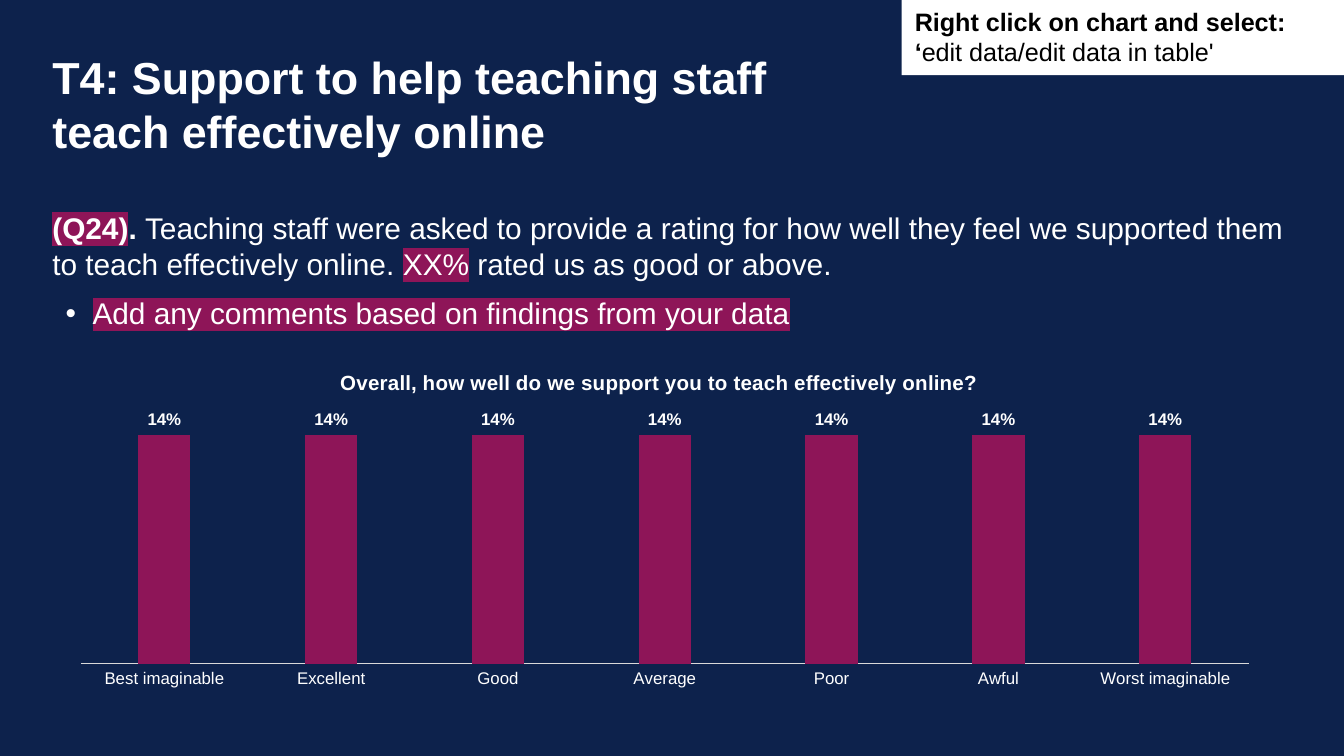
import pptx
import pptx.chart.data
import pptx.dml.color
import pptx.enum.chart
import pptx.enum.shapes
import pptx.enum.text
import pptx.oxml
import pptx.oxml.ns
import pptx.util
from lxml import etree

Cm = pptx.util.Cm
Pt = pptx.util.Pt
qn = pptx.oxml.ns.qn

NAVY, WHITE, BLACK = "0D224C", "FFFFFF", "000000"
PLUM, GREY = "8E1558", "D9D9D9"


def color(hex_code):
    return pptx.dml.color.RGBColor.from_string(hex_code)


def format_font(font, size, hex_code=WHITE, bold=False):
    font.name = "Arial"
    font.size = Pt(size)
    font.bold = bold
    font.color.rgb = color(hex_code)


def add_text(paragraph, text, size=16, hex_code=WHITE, bold=False, highlight=None):
    run = paragraph.add_run()
    run.text = text
    format_font(run.font, size, hex_code, bold)
    if highlight:
        mark = etree.Element(qn("a:highlight"))
        etree.SubElement(mark, qn("a:srgbClr"), val=highlight)
        run.font._element.find(qn("a:solidFill")).addnext(mark)


def set_bullet(paragraph, character=None, left=0, hanging=0):
    properties = paragraph._p.get_or_add_pPr()
    properties.set("marL", str(Cm(left)))
    properties.set("indent", str(-Cm(hanging)))
    if character:
        etree.SubElement(properties, qn("a:buFont"), typeface="Arial")
        etree.SubElement(properties, qn("a:buChar"), char=character)
    else:
        etree.SubElement(properties, qn("a:buNone"))


def set_layout(element, before, **values):
    """Place a chart part by fractions of the chart, ahead of the named child."""
    old = element.find(qn("c:layout"))
    if old is not None:
        element.remove(old)
    layout = etree.Element(qn("c:layout"))
    manual = etree.SubElement(layout, qn("c:manualLayout"))
    for name, value in values.items():
        etree.SubElement(manual, qn(f"c:{name}"), val=str(value))
    element.find(qn(before)).addprevious(layout)


class SlideBuilder:
    """Holds the style and the current slide."""

    line_spacing = 1.0
    paragraph_gap = 7.5

    def __init__(self, presentation):
        self.slide = presentation.slides.add_slide(presentation.slide_layouts[1])
        self.slide.background.fill.solid()
        self.slide.background.fill.fore_color.rgb = color(NAVY)

    def place(self, shape, left, top, width, height):
        shape.left, shape.top = Cm(left), Cm(top)
        shape.width, shape.height = Cm(width), Cm(height)
        frame = shape.text_frame
        frame.margin_left = frame.margin_right = frame.margin_top = frame.margin_bottom = 0
        frame.word_wrap = True
        frame.auto_size = pptx.enum.text.MSO_AUTO_SIZE.NONE
        frame.vertical_anchor = pptx.enum.text.MSO_ANCHOR.TOP
        return frame

    def align(self, paragraph, space_before=0):
        paragraph.alignment = pptx.enum.text.PP_ALIGN.LEFT
        paragraph.line_spacing = self.line_spacing
        paragraph.space_before = Pt(space_before)

    def title(self, text, *box):
        paragraph = self.place(self.slide.shapes.title, *box).paragraphs[0]
        self.align(paragraph)
        add_text(paragraph, text, size=24, bold=True)

    def body(self, lead, bullet, *box):
        frame = self.place(self.slide.placeholders[1], *box)
        paragraph = frame.paragraphs[0]
        set_bullet(paragraph)
        self.align(paragraph)
        for text, style in lead:
            add_text(paragraph, text, **style)
        paragraph = frame.add_paragraph()
        set_bullet(paragraph, "•", left=0.76, hanging=0.51)
        self.align(paragraph, self.paragraph_gap)
        add_text(paragraph, bullet, highlight=PLUM)

    def column_chart(self, title, categories, values, left, top, width, height):
        data = pptx.chart.data.CategoryChartData(number_format="0%")
        data.categories = categories
        data.add_series("Series 1", values)
        chart = self.slide.shapes.add_chart(
            pptx.enum.chart.XL_CHART_TYPE.COLUMN_CLUSTERED,
            Cm(left), Cm(top), Cm(width), Cm(height), data).chart
        format_font(chart.font, 10, BLACK)
        chart.has_legend = False
        add_text(chart.chart_title.text_frame.paragraphs[0], title, size=11, bold=True)
        chart.chart_title.include_in_layout = False
        set_layout(chart.chart_title._element, "c:overlay",
                   xMode="edge", yMode="edge", x=0.23, y=0.04)

        plot = chart.plots[0]
        plot.gap_width, plot.overlap = 219, -27
        plot.vary_by_categories = False
        fill = plot.series[0].format.fill
        fill.solid()
        fill.fore_color.rgb = color(PLUM)
        plot.has_data_labels = True
        labels = plot.data_labels
        labels.show_value = True
        labels.number_format, labels.number_format_is_linked = "0%", False
        labels.position = pptx.enum.chart.XL_LABEL_POSITION.OUTSIDE_END
        format_font(labels.font, 9, bold=True)

        no_tick = pptx.enum.chart.XL_TICK_MARK.NONE
        axis = chart.category_axis
        axis.major_tick_mark = axis.minor_tick_mark = no_tick
        format_font(axis.tick_labels.font, 9)
        axis.format.line.color.rgb = color(GREY)
        axis.format.line.width = Pt(0.75)
        value_axis = chart.value_axis
        value_axis.has_major_gridlines = False
        value_axis.minimum_scale, value_axis.maximum_scale = 0, 0.16
        value_axis.visible = False
        set_layout(chart._chartSpace.chart.plotArea, "c:barChart",
                   layoutTarget="inner", xMode="edge", yMode="edge",
                   x=0.02, y=0.15, w=0.96, h=0.76)

    def callout(self, heading, text, left, top, width, height):
        shape = self.slide.shapes.add_shape(
            pptx.enum.shapes.MSO_SHAPE.RECTANGLE,
            Cm(left), Cm(top), Cm(width), Cm(height))
        shape.shadow.inherit = False
        shape.fill.solid()
        shape.fill.fore_color.rgb = color(WHITE)
        shape.line.fill.background()
        shape.text_frame.word_wrap = True
        shape.text_frame.vertical_anchor = pptx.enum.text.MSO_ANCHOR.TOP
        paragraph = shape.text_frame.paragraphs[0]
        self.align(paragraph)
        add_text(paragraph, heading, size=13.5, hex_code=BLACK, bold=True)
        add_text(paragraph, text, size=13.5, hex_code=BLACK)


def main():
    presentation = pptx.Presentation()
    presentation.slide_width, presentation.slide_height = Cm(25.4), Cm(14.29)
    builder = SlideBuilder(presentation)
    builder.title("T4: Support to help teaching staff teach effectively online",
                  0.99, 0.94, 15.62, 0.94)
    lead = [
        ("(Q24)", {"bold": True, "highlight": PLUM}),
        (". ", {"bold": True}),
        ("Teaching staff were asked to provide a rating for how well they feel "
         "we supported them to teach effectively online. ", {}),
        ("XX%", {"highlight": PLUM}),
        (" rated us as good or above.", {}),
    ]
    builder.body(lead, "Add any comments based on findings from your data",
                 0.99, 3.96, 23.57, 2.97)
    ratings = ["Best imaginable", "Excellent", "Good", "Average", "Poor", "Awful",
               "Worst imaginable"]
    builder.column_chart("Overall, how well do we support you to teach effectively online?",
                         ratings, [0.14] * len(ratings), 1.07, 6.63, 22.99, 6.5)
    builder.callout("Right click on chart and select: ‘", "edit data/edit data in table'",
                    17.04, 0, 8.36, 1.42)
    presentation.save("out.pptx")


if __name__ == "__main__":
    main()
